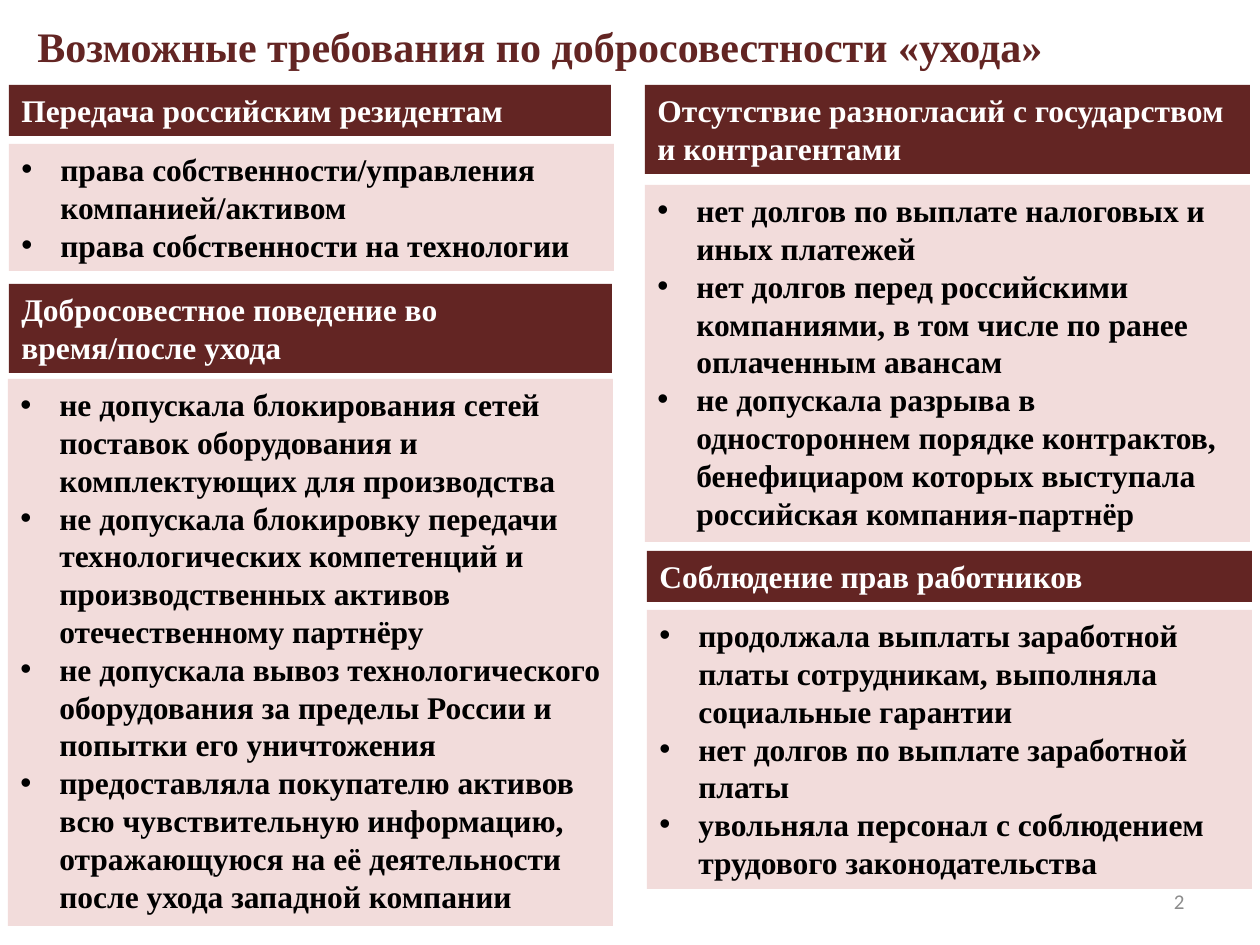
import pptx
import pptx.dml.color
import pptx.enum.shapes
import pptx.enum.text
import pptx.oxml.ns
import pptx.util
from lxml import etree

RGBColor = pptx.dml.color.RGBColor
MAROON = RGBColor(0x63, 0x25, 0x23)
PINK = RGBColor(0xF2, 0xDC, 0xDB)
WHITE = RGBColor(0xFF, 0xFF, 0xFF)
BLACK = RGBColor(0x00, 0x00, 0x00)
GRAY = RGBColor(0x8C, 0x8C, 0x8C)

SERIF = "Times New Roman"
ALIGN = pptx.enum.text.PP_ALIGN
ANCHOR = pptx.enum.text.MSO_ANCHOR
EMU_PER_PX = 914400 / 126
INDENT = 39

# Each section: heading, heading box, list box, list items (boxes in px)
SECTIONS = [
    ("Передача российским резидентам",
     (9, 85, 602, 51), (9, 144, 605, 127),
     ["права собственности/управления компанией/активом",
      "права собственности на технологии"]),
    ("Добросовестное поведение во время/после ухода",
     (9, 284, 603, 89), (8, 379, 605, 547),
     ["не допускала блокирования сетей поставок оборудования и "
      "комплектующих для производства",
      "не допускала блокировку передачи технологических компетенций и "
      "производственных активов отечественному партнёру",
      "не допускала вывоз технологического оборудования за пределы "
      "России и попытки его уничтожения",
      "предоставляла покупателю активов всю чувствительную информацию, "
      "отражающуюся на её деятельности после ухода западной компании"]),
    ("Отсутствие разногласий с государством и контрагентами",
     (645, 85, 605, 89), (645, 185, 605, 357),
     ["нет долгов по выплате налоговых и иных платежей",
      "нет долгов перед российскими компаниями, в том числе по ранее "
      "оплаченным авансам",
      "не допускала разрыва в одностороннем порядке контрактов, "
      "бенефициаром которых выступала российская компания-партнёр"]),
    ("Соблюдение прав работников",
     (647, 551, 605, 51), (647, 610, 605, 279),
     ["продолжала выплаты заработной платы сотрудникам, выполняла "
      "социальные гарантии",
      "нет долгов по выплате заработной платы",
      "увольняла персонал с соблюдением трудового законодательства"]),
]


def px(n):
    return pptx.util.Emu(round(n * EMU_PER_PX))


def write(sp, lines, size, color, font=SERIF, bold=True,
          align=ALIGN.LEFT, anchor=ANCHOR.TOP):
    tf = sp.text_frame
    tf.word_wrap = True
    tf.vertical_anchor = anchor
    tf.text = "\n".join(lines)
    for p in tf.paragraphs:
        p.alignment = align
        for r in p.runs:
            r.font.name = font
            r.font.size = pptx.util.Pt(size)
            r.font.bold = bold
            r.font.color.rgb = color


def add_bullets(sp):
    for p in sp.text_frame.paragraphs:
        pPr = p._p.get_or_add_pPr()
        pPr.set("marL", str(px(INDENT)))
        pPr.set("indent", str(-px(INDENT)))
        qn = pptx.oxml.ns.qn
        etree.SubElement(pPr, qn("a:buFont"), typeface="Arial")
        etree.SubElement(pPr, qn("a:buChar"), char="•")


def add_panel(s, box, fill, lines, color):
    sp = s.shapes.add_shape(pptx.enum.shapes.MSO_SHAPE.RECTANGLE,
                            *map(px, box))
    sp.shadow.inherit = False
    sp.fill.solid()
    sp.fill.fore_color.rgb = fill
    sp.line.fill.background()
    write(sp, lines, 18, color)
    return sp


def add_label(s, box, text, size, color, **style):
    sp = s.shapes.add_textbox(*map(px, box))
    write(sp, [text], size, color, **style)


def main():
    prs = pptx.Presentation()
    prs.slide_width, prs.slide_height = px(1260), px(945)
    s = prs.slides.add_slide(prs.slide_layouts[6])

    # Title
    add_label(s, (25, 14, 1131, 63),
              "Возможные требования по добросовестности «ухода»", 24, MAROON)

    # Requirement sections
    for heading, heading_box, list_box, items in SECTIONS:
        add_panel(s, heading_box, MAROON, [heading], WHITE)
        add_bullets(add_panel(s, list_box, PINK, items, BLACK))

    # Page number
    add_label(s, (903, 876, 294, 50), "2", 12, GRAY, font="Calibri",
              bold=False, align=ALIGN.RIGHT, anchor=ANCHOR.MIDDLE)

    prs.save("out.pptx")


if __name__ == "__main__":
    main()
